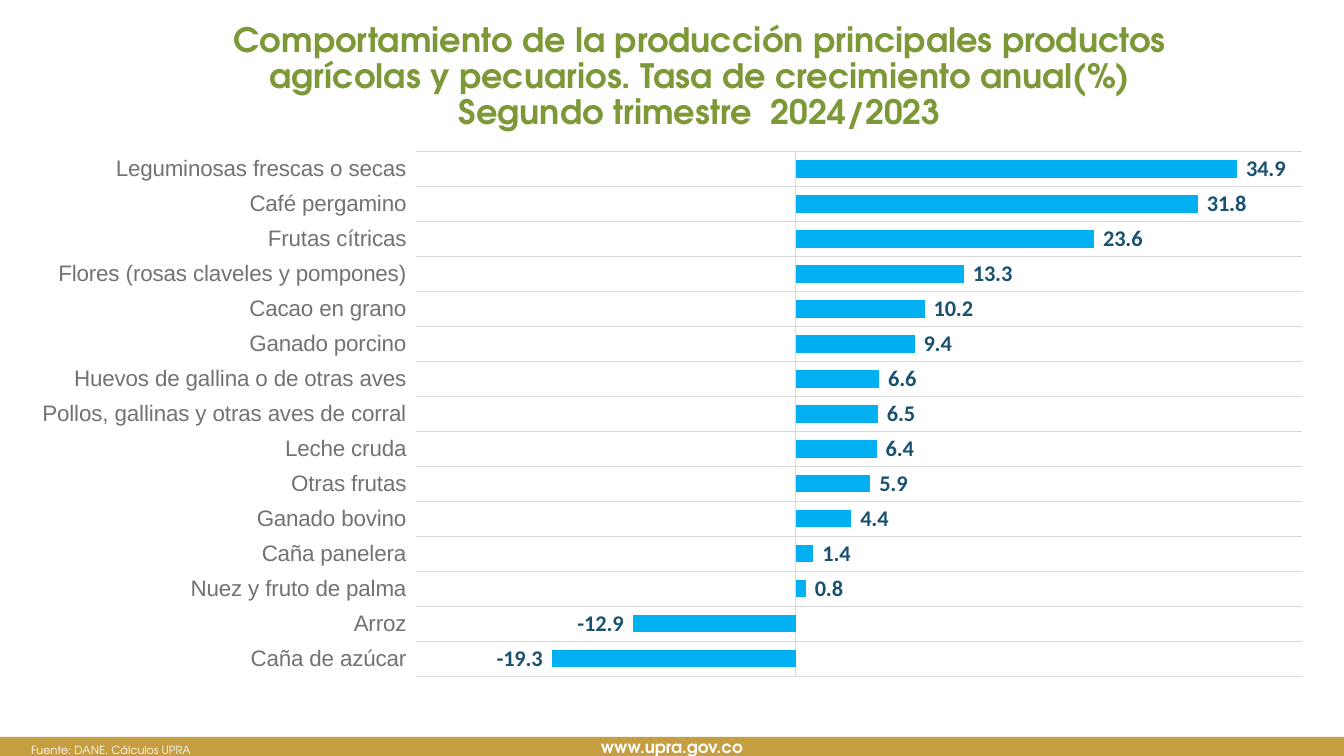
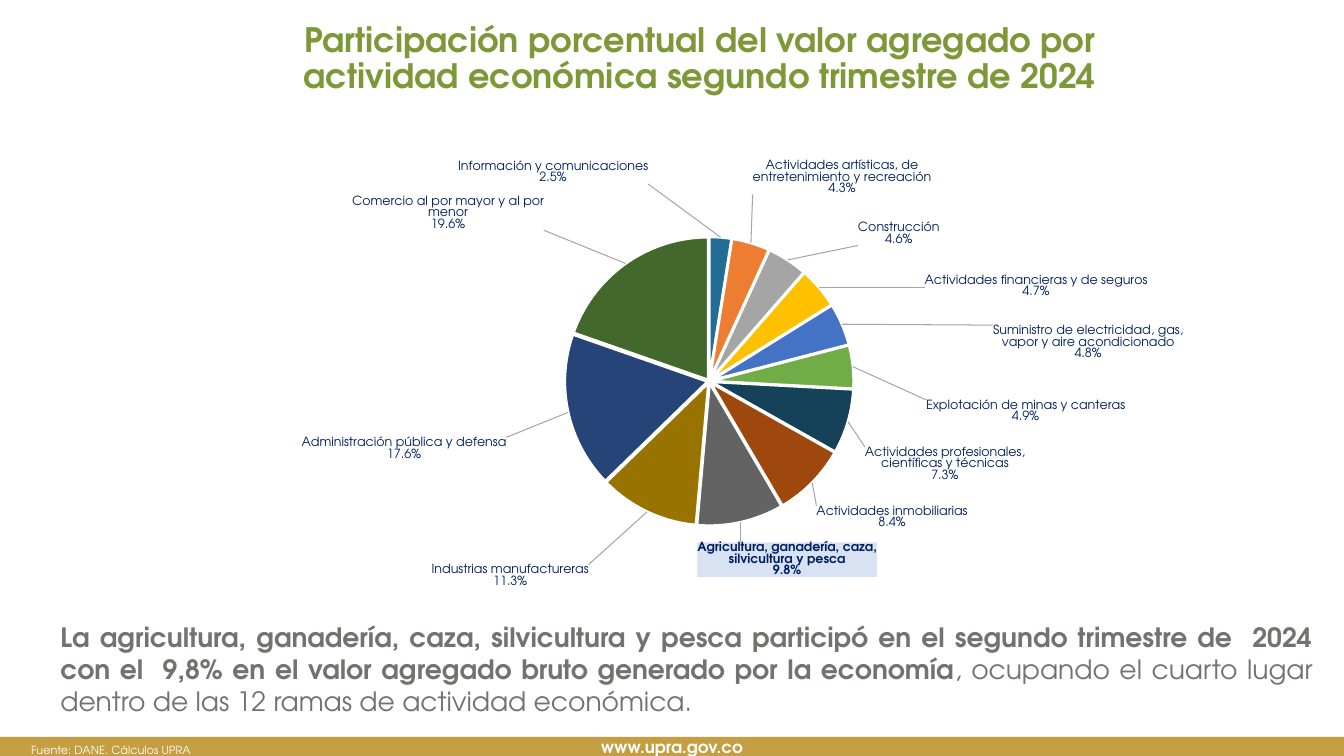
from pptx import Presentation
from pptx.chart.data import CategoryChartData
from pptx.dml.color import RGBColor
from pptx.enum.chart import XL_CHART_TYPE, XL_LABEL_POSITION, XL_TICK_LABEL_POSITION, XL_TICK_MARK
from pptx.enum.shapes import MSO_SHAPE
from pptx.enum.text import MSO_ANCHOR, PP_ALIGN
from pptx.oxml import parse_xml
from pptx.oxml.ns import nsdecls, qn
from pptx.util import Inches, Pt

# Shared style
WIDTH, HEIGHT = Inches(13.33), Inches(7.5)
FONT = "TeX Gyre Adventor"
GREEN, GOLD, WHITE, GRAY = "7D9837", "C59E41", "FFFFFF", "767171"
NAVY, RULE, SKY, TEAL = "002060", "D9D9D9", "00B0F0", "1A5170"

# Boxes as left, top, width, height in percent of the slide
TITLE_BOX = (15.9, 2.4, 72.3, 14.8)
BAND_BOX = (0, 97.47, 100, 2.53)
SOURCE_BOX = (1.58, 97.6, 14.33, 2.4)
GROWTH_BOX = (1.2, 18.6, 97.6, 72.3)
SHARE_BOX = (8.18, 18.8, 83.35, 62.67)
FINDING_BOX = (0, 81.47, 98.42, 14.13)

GROWTH_FORMAT = '_-* #,##0.0_-;\\-* #,##0.0_-;_-* "-"??_-;'
GROWTH = [
    ("Caña de azúcar", -19.3),
    ("Arroz", -12.9),
    ("Nuez y fruto de palma", 0.8),
    ("Caña panelera", 1.4),
    ("Ganado bovino", 4.4),
    ("Otras frutas", 5.9),
    ("Leche cruda", 6.4),
    ("Pollos, gallinas y otras aves de corral", 6.5),
    ("Huevos de gallina o de otras aves", 6.6),
    ("Ganado porcino", 9.4),
    ("Cacao en grano", 10.2),
    ("Flores (rosas claveles y pompones)", 13.3),
    ("Frutas cítricas", 23.6),
    ("Café pergamino", 31.8),
    ("Leguminosas frescas o secas", 34.9),
]

# Activity, share, slice colour, label shift as shares of the chart
ACTIVITIES = [
    ("Información y comunicaciones", 2.5, "236C95", (-0.15, -0.1)),
    ("Actividades artísticas, de entretenimiento y recreación", 4.3, "ED7D31", (0, -0.09)),
    ("Construcción", 4.6, "A5A5A5", (0.06, -0.02)),
    ("Actividades financieras y de seguros", 4.7, "FFC000", (0.09, 0.03)),
    ("Suministro de electricidad, gas, vapor y aire acondicionado", 4.8, "4472C4", (0.13, 0.08)),
    ("Explotación de minas y canteras", 4.9, "70AD47", (0.06, 0.12)),
    ("Actividades profesionales, científicas y técnicas", 7.3, "154159", (0.01, 0.05)),
    ("Actividades inmobiliarias", 8.4, "9E480E", (0, 0.04)),
    ("Agricultura, ganadería, caza, silvicultura y pesca", 9.8, "636363", (-0.04, 0.03)),
    ("Industrias manufactureras", 11.3, "997300", (-0.05, 0.1)),
    ("Administración pública y defensa", 17.6, "264478", (-0.05, 0.05)),
    ("Comercio al por mayor y al por menor", 19.6, "43682B", (-0.07, -0.06)),
]
HIGHLIGHT = 8


def color(code):
    return RGBColor.from_string(code)


def place(box):
    left, top, width, height = (share / 100 for share in box)
    return int(left * WIDTH), int(top * HEIGHT), int(width * WIDTH), int(height * HEIGHT)


def style(font, size, code, bold=False, name=FONT):
    font.size, font.bold, font.name = Pt(size), bold, name
    font.color.rgb = color(code)


def add_text(slide, box, text, size, code, bold=False, align=PP_ALIGN.CENTER):
    frame = slide.shapes.add_textbox(*place(box)).text_frame
    frame.word_wrap = True
    frame.margin_bottom = 0
    frame.text = text
    paragraph = frame.paragraphs[0]
    paragraph.alignment = align
    for run in paragraph.runs:
        style(run.font, size, code, bold)
    return paragraph


def add_footer(slide, box):
    band = slide.shapes.add_shape(MSO_SHAPE.RECTANGLE, *place(box))
    band.shadow.inherit = False
    band.fill.solid()
    band.fill.fore_color.rgb = color(GOLD)
    band.line.fill.background()
    frame = band.text_frame
    frame.vertical_anchor = MSO_ANCHOR.MIDDLE
    frame.margin_top = frame.margin_bottom = 0
    frame.text = "www.upra.gov.co"
    frame.paragraphs[0].alignment = PP_ALIGN.CENTER
    style(frame.paragraphs[0].runs[0].font, 12, WHITE, True)
    add_text(slide, SOURCE_BOX, "Fuente: DANE. Cálculos UPRA", 8, WHITE, align=PP_ALIGN.JUSTIFY)


def add_base(prs, title):
    """Blank slide with the shared title and footer."""
    slide = prs.slides.add_slide(prs.slide_layouts[6])
    add_footer(slide, BAND_BOX)
    add_text(slide, TITLE_BOX, title, 24, GREEN, True).line_spacing = 0.9
    return slide


def add_plain_chart(slide, box, kind, rows):
    data = CategoryChartData()
    data.categories = [row[0] for row in rows]
    data.add_series("Series 1", [row[1] for row in rows])
    chart = slide.shapes.add_chart(kind, *place(box), data).chart
    chart.has_title = chart.has_legend = False
    return chart


def add_growth_chart(slide, box):
    chart = add_plain_chart(slide, box, XL_CHART_TYPE.BAR_CLUSTERED, GROWTH)
    style(chart.font, 10.5, "000000", name="Arial")

    # Axes
    products, rates = chart.category_axis, chart.value_axis
    products.tick_label_position = XL_TICK_LABEL_POSITION.LOW
    products.major_tick_mark = products.minor_tick_mark = XL_TICK_MARK.NONE
    products.has_major_gridlines = True
    style(products.tick_labels.font, 16, GRAY, name="Arial")
    for line in (products.format.line, products.major_gridlines.format.line):
        line.color.rgb = color(RULE)
        line.width = Pt(0.75)
    rates.minimum_scale, rates.maximum_scale = -30, 40
    rates.has_major_gridlines = False
    rates.visible = False

    # Bars and their values
    plot = chart.plots[0]
    plot.gap_width = 100
    plot.vary_by_categories = False
    bars = plot.series[0]
    bars.invert_if_negative = False
    bars.format.fill.solid()
    bars.format.fill.fore_color.rgb = color(SKY)
    labels = bars.data_labels
    labels.show_value = True
    labels.position = XL_LABEL_POSITION.OUTSIDE_END
    labels.number_format = GROWTH_FORMAT
    labels.number_format_is_linked = False
    style(labels.font, 16, TEAL, True, "Calibri")


def label_xml(bold=False, fill=None):
    """Format of a label that shows the activity and its percentage."""
    paint = f'<a:solidFill><a:srgbClr val="{fill}"/></a:solidFill>' if fill else "<a:noFill/>"
    return (
        '<c:numFmt formatCode="0.0%" sourceLinked="0"/>'
        f"<c:spPr>{paint}<a:ln><a:noFill/></a:ln></c:spPr>"
        f'<c:txPr><a:bodyPr/><a:p><a:pPr><a:defRPr sz="900" b="{int(bold)}">'
        f'<a:solidFill><a:srgbClr val="{NAVY}"/></a:solidFill>'
        f'<a:latin typeface="{FONT}"/></a:defRPr></a:pPr><a:endParaRPr lang="es-CO"/></a:p></c:txPr>'
        '<c:dLblPos val="bestFit"/><c:showLegendKey val="0"/><c:showVal val="0"/>'
        '<c:showCatName val="1"/><c:showSerName val="0"/><c:showPercent val="1"/>'
        '<c:showBubbleSize val="0"/><c:separator>\n</c:separator>'
    )


def pie_labels():
    moved = ""
    for index, (_, _, _, (x, y)) in enumerate(ACTIVITIES):
        marked = index == HIGHLIGHT
        moved += (
            f'<c:dLbl><c:idx val="{index}"/><c:layout><c:manualLayout>'
            f'<c:x val="{x}"/><c:y val="{y}"/></c:manualLayout></c:layout>'
            f'{label_xml(marked, "D9E2F3" if marked else None)}</c:dLbl>'
        )
    return parse_xml(
        f'<c:dLbls {nsdecls("c", "a")}>{moved}{label_xml()}<c:showLeaderLines val="1"/>'
        '<c:leaderLines><c:spPr><a:ln w="9525"><a:solidFill><a:srgbClr val="A6A6A6"/>'
        "</a:solidFill></a:ln></c:spPr></c:leaderLines></c:dLbls>"
    )


def set_plot_area(chart, x, y, w, h):
    area = chart.plots[0]._element.getparent()
    for layout in area.findall(qn("c:layout")):
        area.remove(layout)
    area.insert(0, parse_xml(
        f'<c:layout {nsdecls("c")}><c:manualLayout><c:layoutTarget val="inner"/>'
        '<c:xMode val="edge"/><c:yMode val="edge"/>'
        f'<c:x val="{x}"/><c:y val="{y}"/><c:w val="{w}"/><c:h val="{h}"/>'
        "</c:manualLayout></c:layout>"
    ))


def add_share_chart(slide, box):
    chart = add_plain_chart(slide, box, XL_CHART_TYPE.PIE, ACTIVITIES)
    style(chart.font, 9, NAVY)
    set_plot_area(chart, 0.18, 0.2, 0.71, 0.61)
    chart.plots[0].vary_by_categories = True
    shares = chart.plots[0].series[0]

    # Slices
    for index, (_, _, code, _) in enumerate(ACTIVITIES):
        piece = shares.points[index].format
        piece.fill.solid()
        piece.fill.fore_color.rgb = color(code)
        piece.line.color.rgb = color(WHITE)
        piece.line.width = Pt(2)
    element = shares._element
    element.find(qn("c:tx")).addnext(parse_xml(f'<c:explosion {nsdecls("c")} val="1"/>'))
    element.find(qn("c:cat")).addprevious(pie_labels())


def add_finding(slide, box):
    finding = add_text(
        slide, box,
        "La agricultura, ganadería, caza, silvicultura y pesca participó en el segundo trimestre "
        "de  2024 con el  9,8% en el valor agregado bruto generado por la economía",
        19, GRAY, True, PP_ALIGN.JUSTIFY)
    finding._p.get_or_add_pPr().set("marL", str(Inches(0.5)))
    rest = finding.add_run()
    rest.text = ", ocupando el cuarto lugar dentro de las 12 ramas de actividad económica."
    style(rest.font, 19, GRAY)


def main():
    prs = Presentation()
    prs.slide_width, prs.slide_height = WIDTH, HEIGHT

    growth = add_base(
        prs, "Comportamiento de la producción principales productos agrícolas y pecuarios. "
        "Tasa de crecimiento anual(%)\vSegundo trimestre  2024/2023")
    add_growth_chart(growth, GROWTH_BOX)

    participation = add_base(
        prs, "Participación porcentual del valor agregado por actividad económica "
        "segundo trimestre de 2024")
    add_share_chart(participation, SHARE_BOX)
    add_finding(participation, FINDING_BOX)

    prs.save("out.pptx")


if __name__ == "__main__":
    main()
